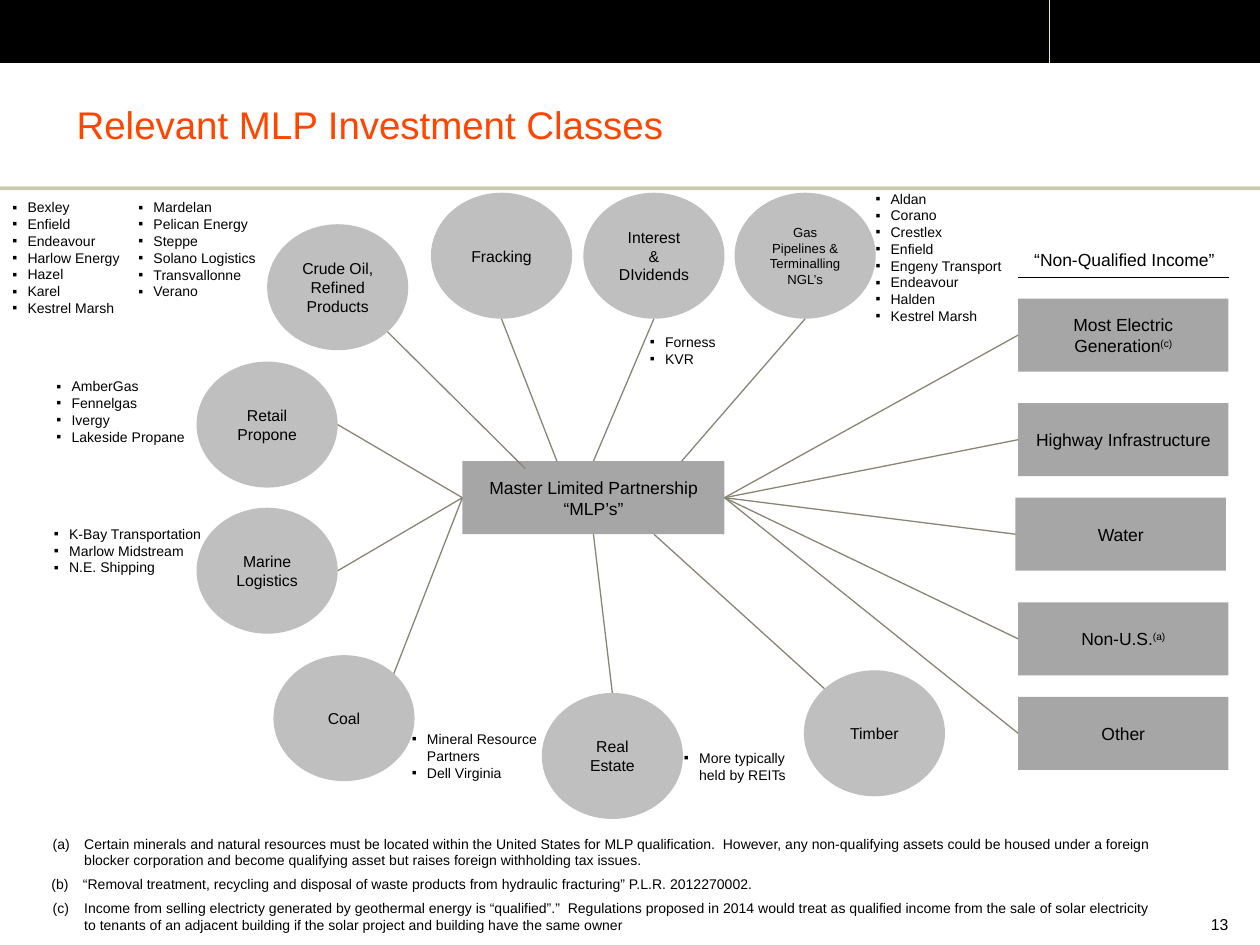
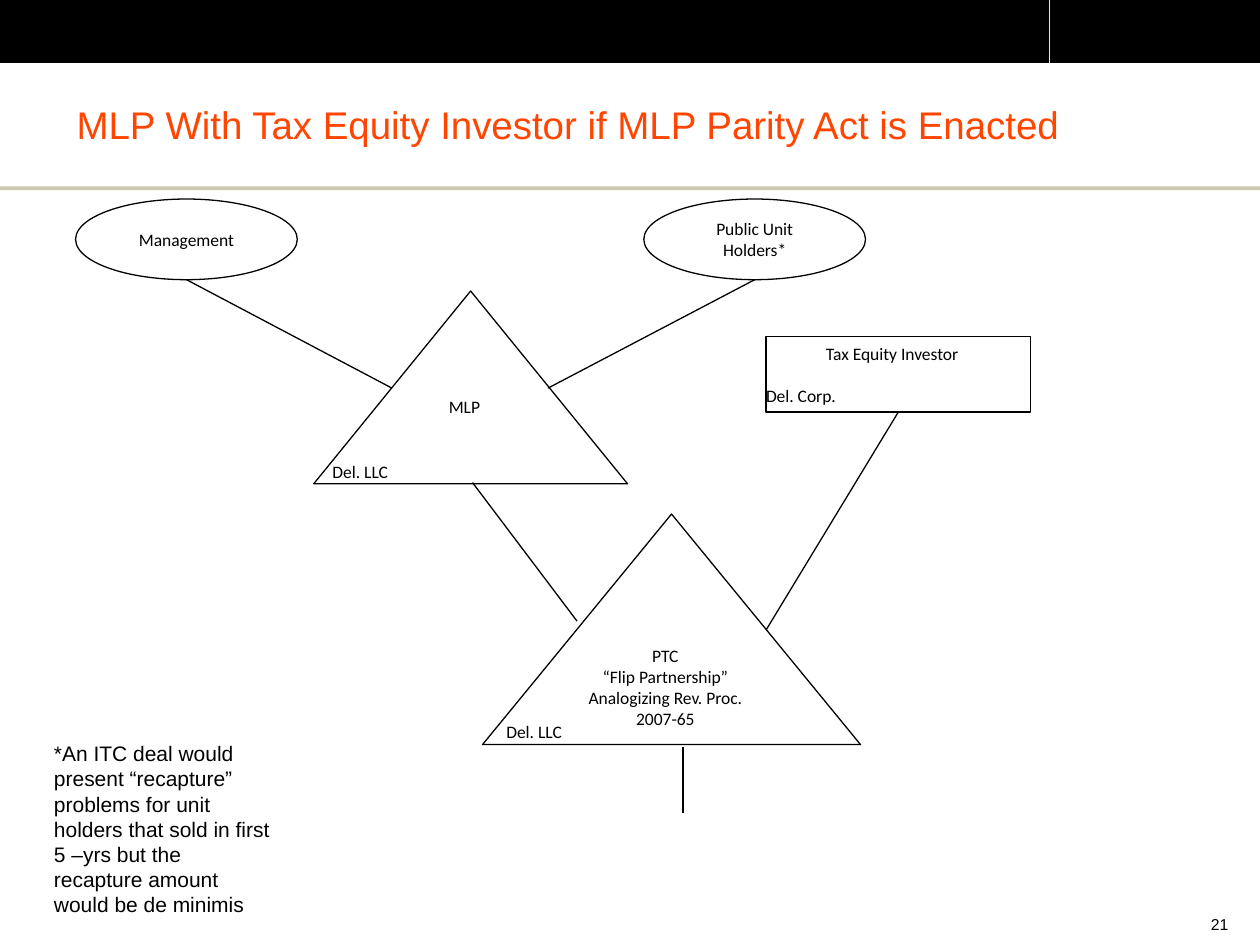
from dataclasses import dataclass
from math import cos, radians, sin

from lxml.etree import SubElement
from pptx import Presentation
from pptx.dml.color import RGBColor
from pptx.enum.shapes import MSO_CONNECTOR, MSO_SHAPE
from pptx.enum.text import MSO_ANCHOR, PP_ALIGN
from pptx.oxml.ns import qn
from pptx.util import Pt

SCALE = 9144


def emu(px):
    """Turn px into EMU."""
    return round(px * SCALE)


@dataclass(frozen=True)
class Theme:
    """Colours, fonts and type sizes shared by the deck."""
    black: str = "000000"
    white: str = "FFFFFF"
    title: str = "FF4500"
    divider: str = "E6E6D9"
    rule: str = "CDC8B1"
    block: str = "A6A6A6"
    circle: str = "BFBFBF"
    spoke: str = "888575"
    sans: str = "Arial"
    chart_font: str = "Calibri"
    title_size: float = 22
    note_size: float = 12
    label_size: float = 10
    circle_size: float = 9
    dense_size: float = 7.5
    list_size: float = 8


@dataclass(frozen=True)
class Box:
    """A rectangle in px."""
    left: int
    top: int
    width: int
    height: int

    def inner(self, left, top, width, height):
        """Return a box placed relative to this one."""
        return Box(self.left + left, self.top + top, width, height)

    def point(self, x, y):
        """Return a point placed relative to this box."""
        return self.left + x, self.top + y

    def rim(self, degrees):
        """Return the point of the inscribed ellipse at a clockwise angle from the right."""
        angle = radians(degrees)
        return self.point(self.width / 2 * (1 + cos(angle)), self.height / 2 * (1 + sin(angle)))

    def emus(self):
        """Return left, top, width and height in EMU."""
        return [emu(px) for px in (self.left, self.top, self.width, self.height)]


THEME = Theme()
MAP_AREA = Box(0, 146, 1000, 504)
INCOME_AREA = Box(806, 190, 172, 421)
NOTES_AREA = Box(32, 658, 925, 88)
STRUCTURE_AREA = Box(60, 158, 758, 487)
CENTER = PP_ALIGN.CENTER
MIDDLE = MSO_ANCHOR.MIDDLE

CLASSES = [
    ("Crude Oil,\nRefined Products", (212, 32), 45, (417, 226)),
    ("Fracking", (342, 7), 90, (442, 220)),
    ("Interest\n&\nDIvidends", (463, 7), 90, (471, 220)),
    ("Gas\nPipelines & Terminalling\nNGL’s", (583, 7), 90, (541, 220)),
    ("Retail\nPropone", (156, 141), 0, (367, 249)),
    ("Marine\nLogistics", (156, 257), 0, (367, 249)),
    ("Coal", (217, 374), -45, (367, 249)),
    ("Real\nEstate", (430, 404), -90, (471, 278)),
    ("Timber", (638, 386), 225, (519, 278)),
]
EXAMPLES = [
    ((0, 7, 115, 104), "Bexley\nEnfield\nEndeavour\nHarlow Energy\nHazel\nKarel\nKestrel Marsh"),
    ((100, 7, 133, 91), "Mardelan\nPelican Energy\nSteppe\nSolano Logistics\nTransvallonne\nVerano"),
    ((685, 0, 129, 118), "Aldan\nCorano\nCrestlex\nEnfield\nEngeny Transport\nEndeavour\nHalden\nKestrel Marsh"),
    ((506, 114, 88, 37), "Forness\nKVR"),
    ((35, 149, 127, 64), "AmberGas\nFennelgas\nIvergy\nLakeside Propane"),
    ((33, 266, 142, 50), "K-Bay Transportation\nMarlow Midstream\nN.E. Shipping"),
    ((317, 429, 126, 50), "Mineral Resource Partners\nDell Virginia"),
    ((533, 444, 112, 37), "More typically held by REITs"),
]
INCOME_KINDS = [
    (2, 47, "Most Electric Generation", "(c)"),
    (2, 130, "Highway Infrastructure", ""),
    (0, 205, "Water", ""),
    (2, 288, "Non-U.S.", "(a)"),
    (2, 363, "Other", ""),
]
FOOTNOTES = [
    ((0, 0, 925, 37), "(a)\tCertain minerals and natural resources must be located within the United States "
     "for MLP qualification.  However, any non-qualifying assets could be housed under a foreign blocker "
     "corporation and become qualifying asset but raises foreign withholding tax issues."),
    ((-1, 32, 644, 24), "(b)\t“Removal treatment, recycling and disposal of waste products from hydraulic "
     "fracturing” P.L.R. 2012270002."),
    ((0, 51, 893, 37), "(c)\tIncome from selling electricty generated by geothermal energy is “qualified”.”  "
     "Regulations proposed in 2014 would treat as qualified income from the sale of solar electricity to "
     "tenants of an adjacent building if the solar project and building have the same owner"),
]


def style_span(span, size, font=THEME.sans, colour=THEME.black):
    """Set the type of one run."""
    span.font.size = Pt(size)
    span.font.name = font
    span.font.color.rgb = RGBColor.from_string(colour)


def write(shape, text, size, font=THEME.sans, colour=THEME.black,
          align=PP_ALIGN.LEFT, anchor=MSO_ANCHOR.TOP, insets=(10, 5, 10, 5)):
    """Fill a shape with wrapped text, one paragraph per line."""
    frame = shape.text_frame
    frame.text = text
    frame.word_wrap = True
    frame.vertical_anchor = anchor
    frame.margin_left, frame.margin_top, frame.margin_right, frame.margin_bottom = map(emu, insets)
    for para in frame.paragraphs:
        para.alignment = align
        for span in para.runs:
            style_span(span, size, font, colour)
    return frame


def add_text(page, box, text, size, **style):
    """Add a text box."""
    return write(page.shapes.add_textbox(*box.emus()), text, size, **style)


def add_block(page, kind, box, fill=None, line=None):
    """Add a flat preset shape."""
    shape = page.shapes.add_shape(kind, *box.emus())
    shape.shadow.inherit = False
    if fill:
        shape.fill.solid()
        shape.fill.fore_color.rgb = RGBColor.from_string(fill)
    else:
        shape.fill.background()
    if line:
        shape.line.color.rgb = RGBColor.from_string(line)
        shape.line.width = Pt(0.75)
    else:
        shape.line.fill.background()
    return shape


def add_line(page, start, end, colour, width=0.75):
    """Add a straight line between two points."""
    line = page.shapes.add_connector(MSO_CONNECTOR.STRAIGHT, *map(emu, (*start, *end)))
    line.line.color.rgb = RGBColor.from_string(colour)
    line.line.width = Pt(width)
    SubElement(line._element.spPr, qn("a:effectLst"))


def hang(para, indent, bullet=None):
    """Give a paragraph a hanging indent and an optional bullet."""
    props = para._p.get_or_add_pPr()
    props.set("marL", str(emu(indent)))
    props.set("indent", str(-emu(indent)))
    if bullet:
        SubElement(props, qn("a:buFont")).set("typeface", THEME.sans)
        SubElement(props, qn("a:buChar")).set("char", bullet)
    else:
        tab = SubElement(SubElement(props, qn("a:tabLst")), qn("a:tab"))
        tab.set("pos", str(emu(indent)))
        tab.set("algn", "l")


def new_page(deck, title, number):
    """Add a page with the band, rule, title and page number."""
    page = deck.slides.add_slide(deck.slide_layouts[6])
    add_block(page, MSO_SHAPE.RECTANGLE, Box(0, 0, 1000, 50), THEME.black)
    add_line(page, (833, 0), (833, 50), THEME.divider, 1)
    add_block(page, MSO_SHAPE.RECTANGLE, Box(0, 148, 1000, 3), THEME.rule)
    frame = add_text(page, Box(51, 52, 899, 98), title, THEME.title_size, colour=THEME.title,
                     anchor=MIDDLE, insets=(10, 5, 10, 6))
    frame.paragraphs[0].line_spacing = 0.93
    add_text(page, Box(935, 719, 40, 29), str(number), THEME.circle_size,
             align=PP_ALIGN.RIGHT, anchor=MIDDLE, insets=(2, 0, 0, 0))
    return page


def draw_class_map(page, area):
    """Draw the hub, its investment classes and their examples; return the hub's right port."""
    hub = area.inner(367, 220, 208, 58)
    write(add_block(page, MSO_SHAPE.RECTANGLE, hub, THEME.block),
          "Master Limited Partnership\n“MLP’s”", THEME.label_size, align=CENTER, anchor=MIDDLE)
    for name, corner, angle, port in CLASSES:
        circle = area.inner(*corner, 112, 100)
        size = THEME.dense_size if "Pipelines" in name else THEME.circle_size
        write(add_block(page, MSO_SHAPE.OVAL, circle, THEME.circle), name, size,
              align=CENTER, anchor=MIDDLE)
        add_line(page, circle.rim(angle), area.point(*port), THEME.spoke)
    for place, names in EXAMPLES:
        for para in add_text(page, area.inner(*place), names, THEME.list_size).paragraphs:
            hang(para, 12, "▪")
    return hub.point(hub.width, hub.height / 2)


def draw_income(page, area, port):
    """Draw the non-qualified income column and link it to the hub."""
    add_text(page, area.inner(5, 3, 167, 27), "“Non-Qualified Income”", THEME.label_size)
    add_line(page, area.point(2, 30), area.point(169, 30), THEME.black)
    for left, top, name, mark in INCOME_KINDS:
        box = area.inner(left, top, 167, 58)
        frame = write(add_block(page, MSO_SHAPE.RECTANGLE, box, THEME.block), name,
                      THEME.label_size, align=CENTER, anchor=MIDDLE)
        if mark:
            span = frame.paragraphs[0].add_run()
            span.text = mark
            style_span(span, THEME.label_size)
            span._r.get_or_add_rPr().set("baseline", "30000")
        add_line(page, box.point(0, box.height / 2), port, THEME.spoke)


def draw_footnotes(page, area):
    """Place the lettered footnotes."""
    for place, note in FOOTNOTES:
        hang(add_text(page, area.inner(*place), note, THEME.list_size).paragraphs[0], 25)


def draw_structure(page, area):
    """Draw the ownership chart of the partnership."""
    label = dict(size=THEME.label_size, font=THEME.chart_font)
    centred = dict(label, align=CENTER)
    for left, name in ((0, "Management"), (451, "Public Unit Holders*")):
        owner = add_block(page, MSO_SHAPE.OVAL, area.inner(left, 0, 176, 64), THEME.white, THEME.black)
        write(owner, name, anchor=MIDDLE, **centred)

    investor = add_block(page, MSO_SHAPE.RECTANGLE, area.inner(548, 109, 210, 60),
                         THEME.white, THEME.black)
    frame = write(investor, "Tax Equity Investor\nDel. Corp.", insets=(0, 5, 10, 0), **centred)
    frame.paragraphs[1].alignment = PP_ALIGN.LEFT
    frame.paragraphs[1].space_before = Pt(12)

    entities = [
        ((189, 73, 249, 153), "MLP", MSO_ANCHOR.TOP, 7, (194, 203, 102, 24)),
        ((323, 250, 300, 183), "PTC\n“Flip Partnership”\nAnalogizing Rev. Proc. 2007-65",
         MIDDLE, 0, (332, 409, 102, 26)),
    ]
    for place, name, anchor, inset, tag in entities:
        entity = add_block(page, MSO_SHAPE.ISOSCELES_TRIANGLE, area.inner(*place), line=THEME.black)
        write(entity, name, anchor=anchor, insets=(0, inset, 10, 0), **centred)
        add_text(page, area.inner(*tag), "Del. LLC", **label)

    links = [
        ((88, 64), (251, 150)), ((539, 64), (375, 150)), ((315, 225), (398, 335)),
        ((653, 169), (548, 342)), ((482, 435), (482, 487)),
    ]
    for start, end in links:
        add_line(page, area.point(*start), area.point(*end), THEME.black)


def main():
    """Build the deck and save it."""
    deck = Presentation()
    deck.slide_width, deck.slide_height = emu(1000), emu(750)
    page = new_page(deck, "Relevant MLP Investment Classes", 13)
    port = draw_class_map(page, MAP_AREA)
    draw_income(page, INCOME_AREA, port)
    draw_footnotes(page, NOTES_AREA)
    page = new_page(deck, "MLP With Tax Equity Investor if MLP Parity Act is Enacted", 21)
    draw_structure(page, STRUCTURE_AREA)
    add_text(page, Box(33, 583, 192, 151), "*An ITC deal would present “recapture” problems for unit "
             "holders that sold in first 5 –yrs but the recapture amount would be de minimis",
             THEME.note_size)
    deck.save("out.pptx")


if __name__ == "__main__":
    main()
